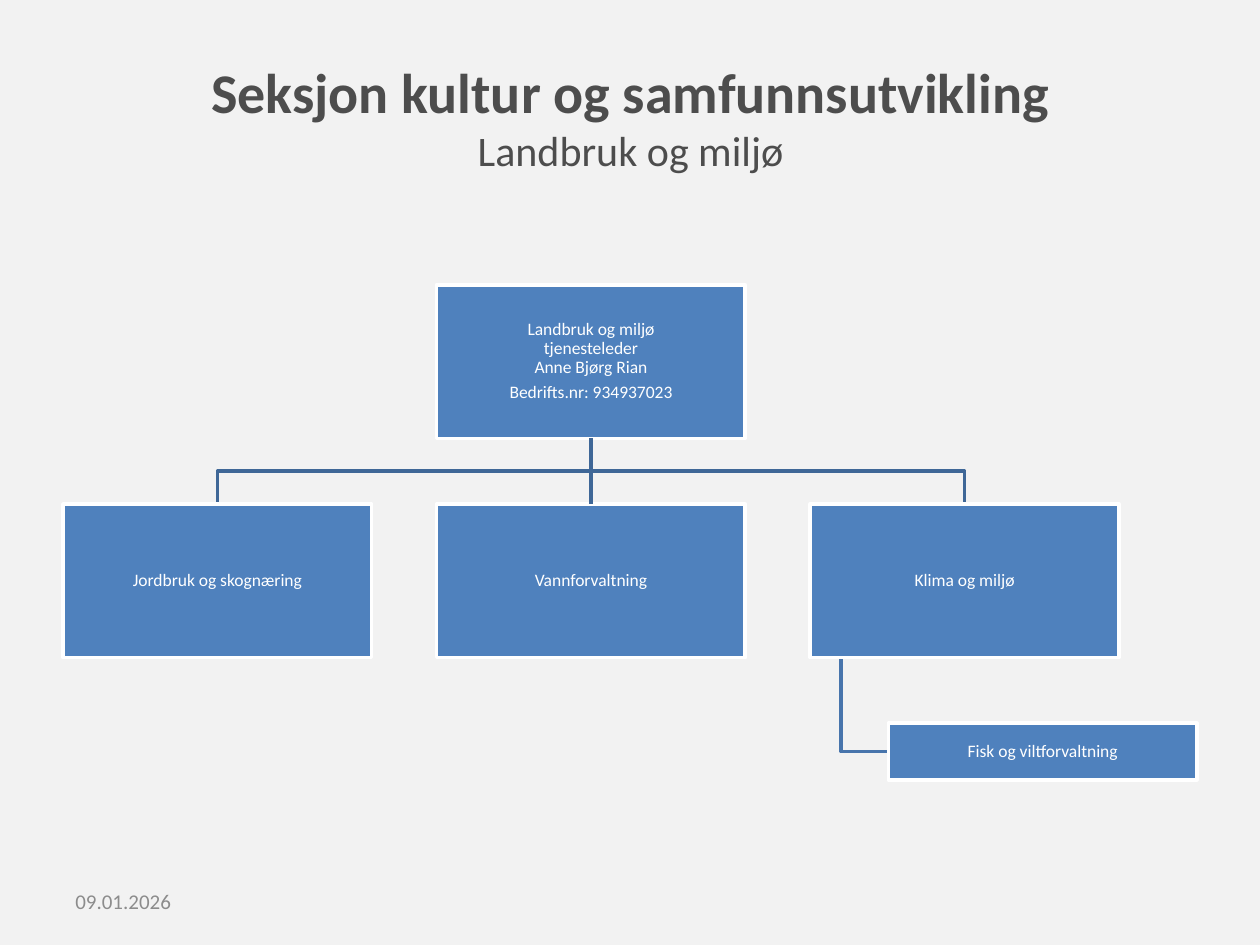
from pptx import Presentation
from pptx.dml.color import RGBColor
from pptx.enum.shapes import MSO_CONNECTOR, MSO_SHAPE
from pptx.enum.text import MSO_ANCHOR, PP_ALIGN
from pptx.oxml.ns import qn
from pptx.util import Inches, Pt

RECTANGLE = MSO_SHAPE.RECTANGLE
STRAIGHT = MSO_CONNECTOR.STRAIGHT
CENTER = PP_ALIGN.CENTER
MIDDLE = MSO_ANCHOR.MIDDLE
BOTTOM_SITE, TOP_SITE = 2, 0

BACKGROUND = RGBColor(0xF2, 0xF2, 0xF2)
TITLE_GREY = RGBColor(0x4D, 0x4D, 0x4D)
DATE_GREY = RGBColor(0x8C, 0x8C, 0x8C)
UNIT_BLUE = RGBColor(0x4F, 0x81, 0xBD)
BRANCH_BLUE = RGBColor(0x3F, 0x67, 0x97)
SUBBRANCH_BLUE = RGBColor(0x48, 0x75, 0xAC)
WHITE = RGBColor(0xFF, 0xFF, 0xFF)

FONT = "Calibri"
LINE_WIDTH = Pt(2)

# Chart grid in inches
LEFT, TOP = 0.5, 2.26
UNIT_W, UNIT_H = 2.45, 1.22
COLUMN_STEP, ROW_STEP = 2.965, 1.74
SUBUNIT_LEFT, SUBUNIT_TOP, SUBUNIT_H = 7.05, 5.74, 0.45

LEADER = [["Landbruk og miljø", "tjenesteleder", "Anne Bjørg Rian"],
          ["Bedrifts.nr: 934937023"]]
UNITS = ["Jordbruk og skognæring", "Vannforvaltning", "Klima og miljø"]
SUBUNIT = "Fisk og viltforvaltning"


def add_run(paragraph, text, size, color, bold=False):
    run = paragraph.add_run()
    run.text = text
    run.font.name = FONT
    run.font.size = Pt(size)
    run.font.bold = bold
    run.font.color.rgb = color


def add_title(slide):
    title = slide.shapes.title
    title.left, title.top = Inches(0.51), Inches(0.3)
    title.width, title.height = Inches(8.99), Inches(1.25)
    title.text_frame.vertical_anchor = MIDDLE
    heading = title.text_frame.paragraphs[0]
    heading.alignment = CENTER
    add_run(heading, "Seksjon kultur og samfunnsutvikling", 32, TITLE_GREY, bold=True)
    heading.add_line_break()
    add_run(heading, "Landbruk og miljø", 24, TITLE_GREY)


def add_unit(slide, left, top, paragraphs, height=UNIT_H):
    """Add an organisation box; each paragraph is a list of lines."""
    unit = slide.shapes.add_shape(
        RECTANGLE, Inches(left), Inches(top), Inches(UNIT_W), Inches(height))
    unit.shadow.inherit = False
    unit.fill.solid()
    unit.fill.fore_color.rgb = UNIT_BLUE
    unit.line.color.rgb = WHITE
    unit.line.width = LINE_WIDTH

    frame = unit.text_frame
    frame.word_wrap = True
    frame.vertical_anchor = MIDDLE
    frame.margin_left = frame.margin_right = Inches(0.01)
    frame.margin_top = frame.margin_bottom = Inches(0.01)
    for number, lines in enumerate(paragraphs):
        paragraph = frame.add_paragraph() if number else frame.paragraphs[0]
        paragraph.alignment = CENTER
        paragraph.line_spacing = 0.9
        paragraph.space_after = Pt(3.5)
        for position, line in enumerate(lines):
            if position:
                paragraph.add_line_break()
            add_run(paragraph, line, 10, WHITE)
    return unit


def add_branch(slide, points, color):
    """Draw an open angled line through points given in inches."""
    start, *rest = [(Inches(x), Inches(y)) for x, y in points]
    builder = slide.shapes.build_freeform(*start)
    builder.add_line_segments(rest, close=False)
    branch = builder.convert_to_shape()
    branch.shadow.inherit = False
    branch.fill.background()
    branch.line.color.rgb = color
    branch.line.width = LINE_WIDTH


def join_units(slide, upper, lower):
    stem = slide.shapes.add_connector(STRAIGHT, 0, 0, 0, 0)
    stem.begin_connect(upper, BOTTOM_SITE)
    stem.end_connect(lower, TOP_SITE)
    stem.line.color.rgb = BRANCH_BLUE
    stem.line.width = LINE_WIDTH
    properties = stem._element.spPr
    properties.append(properties.makeelement(qn("a:effectLst"), {}))


def add_chart_of_units(slide):
    columns = [LEFT + i * COLUMN_STEP for i in range(len(UNITS))]
    centers = [left + UNIT_W / 2 for left in columns]
    unit_top = TOP + ROW_STEP
    leader_bottom = TOP + UNIT_H
    bar = (leader_bottom + unit_top) / 2

    hook = columns[2] + UNIT_W / 10
    subunit_middle = SUBUNIT_TOP + SUBUNIT_H / 2
    add_branch(slide, [(hook, unit_top + UNIT_H), (hook, subunit_middle),
                       (SUBUNIT_LEFT, subunit_middle)], SUBBRANCH_BLUE)
    for center in (centers[2], centers[0]):
        add_branch(slide, [(centers[1], leader_bottom), (centers[1], bar),
                           (center, bar), (center, unit_top)], BRANCH_BLUE)

    leader = add_unit(slide, columns[1], TOP, LEADER)
    units = [add_unit(slide, left, unit_top, [[name]])
             for left, name in zip(columns, UNITS)]
    add_unit(slide, SUBUNIT_LEFT, SUBUNIT_TOP, [[SUBUNIT]], SUBUNIT_H)
    join_units(slide, leader, units[1])


def add_date(slide):
    date = slide.shapes.add_textbox(
        Inches(LEFT), Inches(6.95), Inches(2.33), Inches(0.4))
    date.text_frame.word_wrap = True
    date.text_frame.vertical_anchor = MIDDLE
    add_run(date.text_frame.paragraphs[0], "09.01.2026", 12, DATE_GREY)


def main():
    deck = Presentation()
    deck.slide_width, deck.slide_height = Inches(10), Inches(7.5)
    slide = deck.slides.add_slide(deck.slide_layouts[5])
    slide.background.fill.solid()
    slide.background.fill.fore_color.rgb = BACKGROUND
    add_title(slide)
    add_chart_of_units(slide)
    add_date(slide)
    deck.save("out.pptx")


if __name__ == "__main__":
    main()
